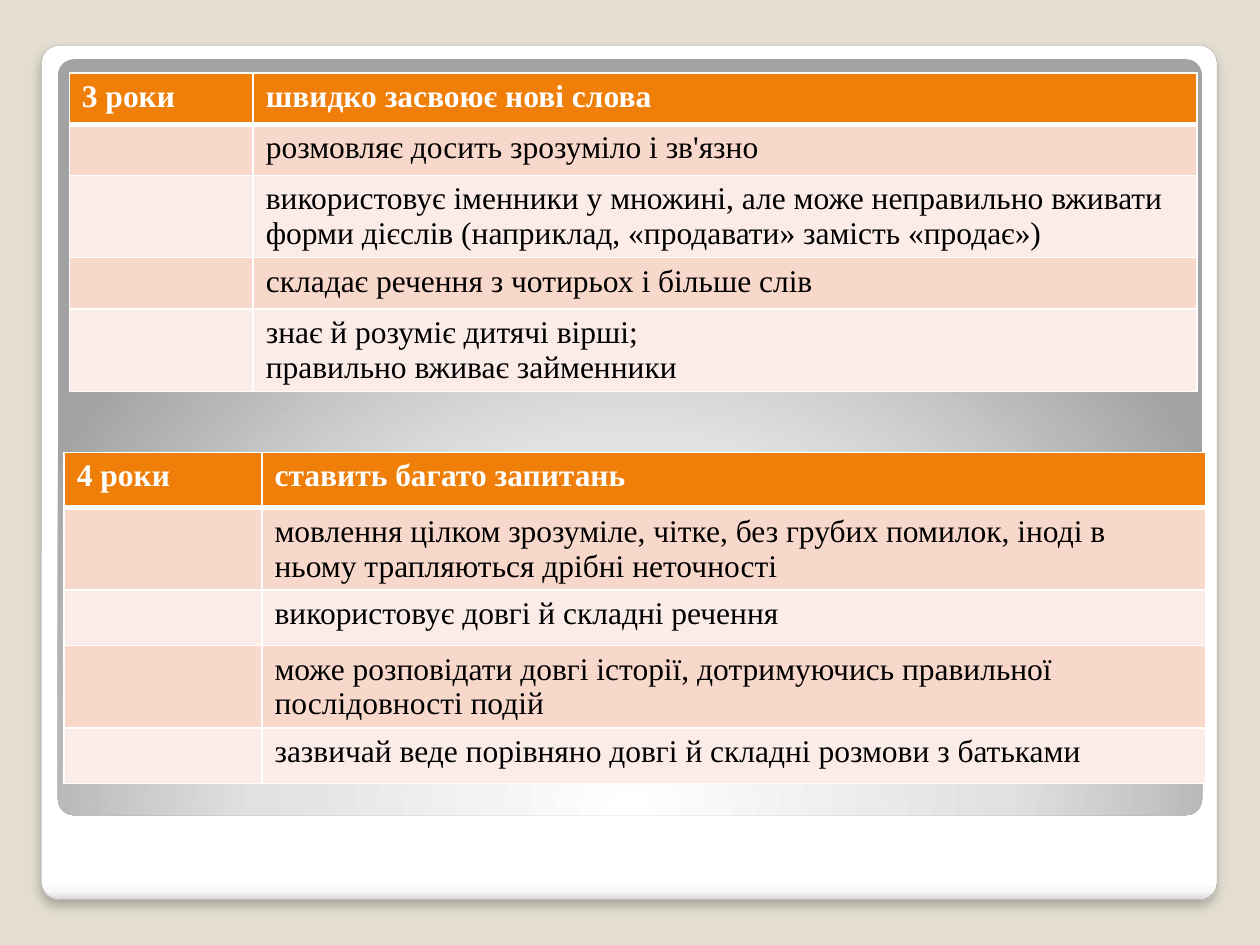
import pptx
import pptx.util
import pptx.dml.color
import pptx.enum.shapes
import pptx.oxml.ns
import lxml.etree

Inches = pptx.util.Inches
Pt = pptx.util.Pt
RGBColor = pptx.dml.color.RGBColor
qn = pptx.oxml.ns.qn

BACK = RGBColor(0xE3, 0xDE, 0xD1)
WHITE = RGBColor(0xFF, 0xFF, 0xFF)
BLACK = RGBColor(0, 0, 0)
EDGE = RGBColor(0xA4, 0xA4, 0xA4)
ORANGE = RGBColor(0xF0, 0x7F, 0x09)
BANDS = (RGBColor(0xF9, 0xD8, 0xCC), RGBColor(0xFC, 0xEC, 0xE7))
CARD = ((0, WHITE), (98, WHITE), (99, RGBColor(0xF7, 0xF7, 0xF7)),
        (100, RGBColor(0xDA, 0xDA, 0xDA)))
GLOW = ((0, WHITE), (55, RGBColor(0xE1, 0xE1, 0xE1)),
        (100, RGBColor(0xA2, 0xA2, 0xA2)))
FONT = "Times New Roman"

THREE = (
    "3 роки",
    "швидко засвоює нові слова",
    "розмовляє досить зрозуміло і зв'язно",
    "використовує іменники у множині, але може неправильно вживати "
    "форми дієслів (наприклад, «продавати» замість «продає»)",
    "складає речення з чотирьох і більше слів",
    "знає й розуміє дитячі вірші;\nправильно вживає займенники",
)
FOUR = (
    "4 роки",
    "ставить багато запитань",
    "мовлення цілком зрозуміле, чітке, без грубих помилок, іноді в "
    "ньому трапляються дрібні неточності",
    "використовує довгі й складні речення",
    "може розповідати довгі історії, дотримуючись правильної "
    "послідовності подій",
    "зазвичай веде порівняно довгі й складні розмови з батьками",
)


def add_node(parent, tag, **attrs):
    node = lxml.etree.SubElement(parent, qn(tag))
    for name, value in attrs.items():
        node.set(name, str(value))
    return node


def set_stops(shape, stops):
    """Give the shape a gradient with these stops and return its node."""
    shape.fill.gradient()
    grad = shape.element.spPr.find(qn("a:gradFill"))
    for child in list(grad):
        grad.remove(child)
    row = add_node(grad, "a:gsLst")
    for place, color in stops:
        stop = add_node(row, "a:gs", pos=place * 1000)
        add_node(stop, "a:srgbClr", val=color)
    return grad


def add_panel(slide, box, stops):
    kind = pptx.enum.shapes.MSO_SHAPE.ROUNDED_RECTANGLE
    shape = slide.shapes.add_shape(kind, *map(Inches, box))
    shape.adjustments[0] = 0.021
    shape.shadow.inherit = False
    return shape, set_stops(shape, stops)


def add_card(slide, box):
    card, grad = add_panel(slide, box, CARD)
    add_node(grad, "a:lin", ang=90 * 60000, scaled=0)
    card.line.color.rgb = EDGE
    card.line.width = Pt(0.16)
    effects = card.element.spPr.find(qn("a:effectLst"))
    shade = add_node(effects, "a:outerShdw", blurRad=Pt(6), dist=Pt(4),
                     dir=90 * 60000, algn="t", rotWithShape=0)
    color = add_node(shade, "a:srgbClr", val=BLACK)
    add_node(color, "a:alpha", val=25000)


def add_glow(slide, box):
    glow, grad = add_panel(slide, box, GLOW)
    focus = add_node(grad, "a:path", path="circle")
    add_node(focus, "a:fillToRect", l=50000, t=175000, r=50000, b=-75000)
    glow.line.fill.background()


def set_cell(cell, text, fill, color, bold, top, base):
    """Fill one cell; top and base are its rule widths in points."""
    props = cell._tc.get_or_add_tcPr()
    for side, width in (("L", 1), ("R", 1), ("T", top), ("B", base)):
        rule = add_node(props, "a:ln" + side, w=Pt(width))
        add_node(add_node(rule, "a:solidFill"), "a:srgbClr", val=WHITE)
    cell.fill.solid()
    cell.fill.fore_color.rgb = fill
    cell.text_frame.text = text
    for para in cell.text_frame.paragraphs:
        for run in para.runs:
            run.font.name = FONT
            run.font.size = Pt(18)
            run.font.bold = bold
            run.font.color.rgb = color


def add_skills(slide, box, first, age, *skills):
    """Add a table of skills whose first column, with the age, is given."""
    left, top, width, height = map(Inches, box)
    table = slide.shapes.add_table(
        len(skills), 2, left, top, width, height).table
    table.columns[0].width = Inches(first)
    table.columns[1].width = width - Inches(first)
    for i, skill in enumerate(skills):
        head = i == 0
        fill = ORANGE if head else BANDS[(i - 1) % 2]
        color = WHITE if head else BLACK
        for j, text in enumerate((age if head else "", skill)):
            set_cell(table.cell(i, j), text, fill, color, head,
                     3 if i == 1 else 1, 3 if head else 1)


def main():
    deck = pptx.Presentation()
    deck.slide_width, deck.slide_height = Inches(10), Inches(7.5)
    slide = deck.slides.add_slide(deck.slide_layouts[6])
    slide.background.fill.solid()
    slide.background.fill.fore_color.rgb = BACK
    add_card(slide, (0.33, 0.36, 9.33, 6.78))
    add_glow(slide, (0.46, 0.47, 9.08, 6))
    add_skills(slide, (0.55, 0.58, 8.95, 2.03), 1.46, *THREE)
    add_skills(slide, (0.51, 3.59, 9.06, 2.2), 1.57, *FOUR)
    deck.save("out.pptx")


if __name__ == "__main__":
    main()
